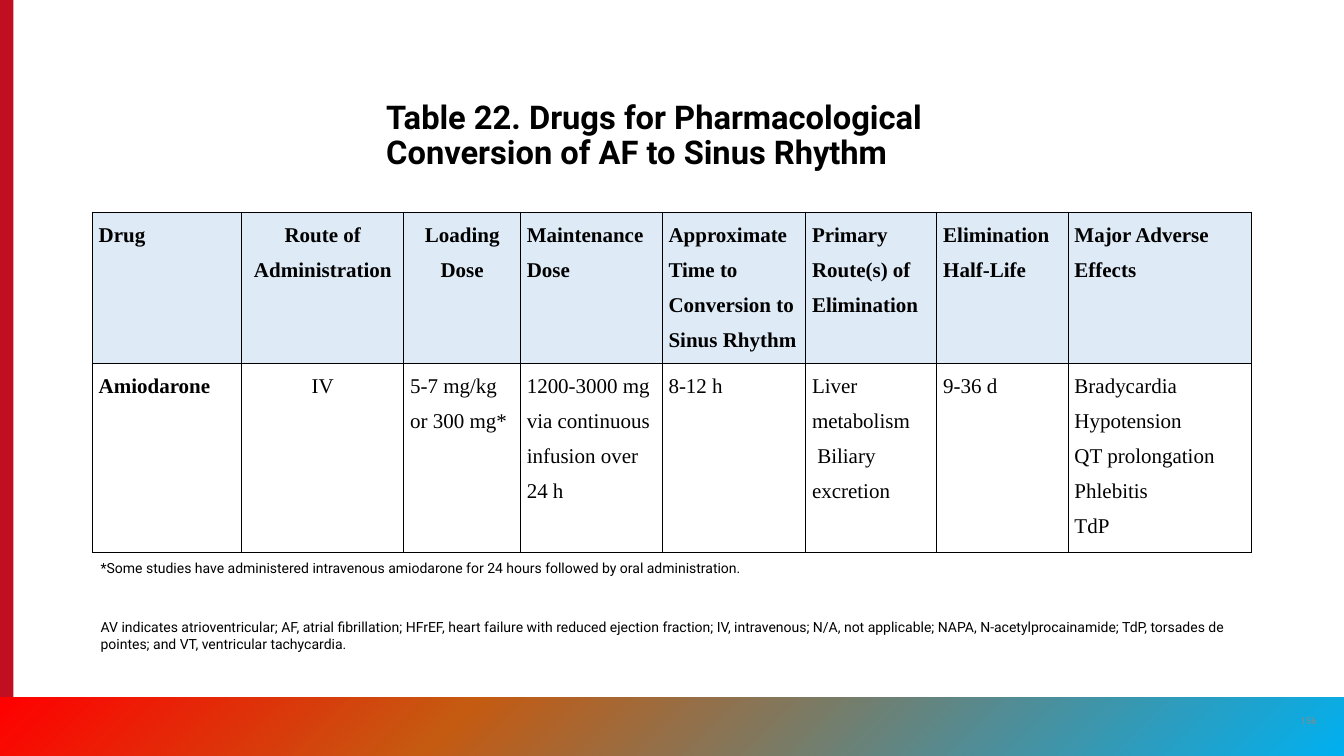
import dataclasses

import lxml.etree
import pptx
import pptx.dml.color
import pptx.enum.shapes
import pptx.enum.text
import pptx.oxml.ns
import pptx.util

Pt = pptx.util.Pt
RGB = pptx.dml.color.RGBColor.from_string
qn = pptx.oxml.ns.qn
ALIGN = pptx.enum.text.PP_ALIGN
ANCHOR = pptx.enum.text.MSO_ANCHOR


@dataclasses.dataclass(frozen=True)
class Theme:
    sans: str = "Roboto"
    serif: str = "Times New Roman"
    ink: str = "000000"
    paper: str = "FFFFFF"
    muted: str = "8A8B8A"
    accent: str = "C10E21"
    header: str = "DEEAF6"
    band: tuple = ((0, "FF0000"), (34, "C55A11"), (100, "00B0F0"))
    title_size: float = 28
    table_size: float = 18
    note_size: float = 12
    number_size: float = 8


def apply(target, formats):
    for name, value in formats.items():
        setattr(target, name, value)


class SlideBuilder:
    def __init__(self, page, theme):
        self.page = page
        self.theme = theme

    def add_span(self, para, text, size, font, color=None, bold=False, **formats):
        apply(para, formats)
        span = para.add_run()
        span.text = text
        apply(span.font, {"size": Pt(size), "name": font, "bold": bold})
        span.font.color.rgb = RGB(color or self.theme.ink)

    def add_text(self, frame, words, size, anchor=ANCHOR.TOP, **formats):
        box = self.page.shapes.add_textbox(*map(Pt, frame))
        apply(box.text_frame, {"word_wrap": True, "vertical_anchor": anchor})
        self.add_span(box.text_frame.paragraphs[0], words, size, self.theme.sans, **formats)

    def add_bar(self, frame, color=None, stops=()):
        kind = pptx.enum.shapes.MSO_SHAPE.RECTANGLE
        bar = self.page.shapes.add_shape(kind, *map(Pt, frame))
        bar.shadow.inherit = False
        bar.line.fill.background()
        if color:
            bar.fill.solid()
            bar.fill.fore_color.rgb = RGB(color)
            return
        bar.fill.gradient()
        bar.fill.gradient_angle = 315
        stop_list = bar._element.spPr.find(".//" + qn("a:gsLst"))
        for stop in list(stop_list):
            stop_list.remove(stop)
        for position, shade in stops:
            stop = lxml.etree.SubElement(stop_list, qn("a:gs"), pos=str(position * 1000))
            lxml.etree.SubElement(stop, qn("a:srgbClr"), val=shade)

    def add_border(self, cell):
        properties = cell._tc.get_or_add_tcPr()
        for index, side in enumerate(("a:lnL", "a:lnR", "a:lnT", "a:lnB")):
            line = lxml.etree.Element(qn(side), w=str(Pt(1)))
            fill = lxml.etree.SubElement(line, qn("a:solidFill"))
            lxml.etree.SubElement(fill, qn("a:srgbClr"), val=self.theme.ink)
            properties.insert(index, line)

    def fill_cell(self, cell, lines, fill, bold, align, indented):
        apply(cell, {"margin_left": Pt(5.4), "margin_right": Pt(5.4),
                     "margin_top": 0, "margin_bottom": 0})
        cell.fill.solid()
        cell.fill.fore_color.rgb = RGB(fill)
        self.add_border(cell)
        for index, line in enumerate(lines):
            para = cell.text_frame.paragraphs[0] if index == 0 else cell.text_frame.add_paragraph()
            self.add_span(para, line, self.theme.table_size, self.theme.serif,
                          bold=bold, alignment=align, line_spacing=1.5)
            if line in indented:
                para._p.get_or_add_pPr().set("indent", str(Pt(4.5)))

    def add_table(self, left, top, widths, heights, rows, centred, indented):
        holder = self.page.shapes.add_table(
            len(rows), len(widths), Pt(left), Pt(top), Pt(sum(widths)), Pt(sum(heights)))
        table = holder.table
        table.horz_banding = False
        for column, width in zip(table.columns, widths):
            column.width = Pt(width)
        for row, height in zip(table.rows, heights):
            row.height = Pt(height)
        for r, row in enumerate(rows):
            for c, lines in enumerate(row):
                fill = self.theme.paper if r else self.theme.header
                align = ALIGN.CENTER if (r, c) in centred else ALIGN.LEFT
                self.fill_cell(table.cell(r, c), lines, fill, r == 0 or c == 0, align, indented)


DRUG_ROWS = [
    [["Drug"], ["Route of Administration"], ["Loading Dose"], ["Maintenance Dose"],
     ["Approximate Time to Conversion to Sinus Rhythm"],
     ["Primary Route(s) of Elimination"], ["Elimination Half-Life"],
     ["Major Adverse Effects"]],
    [["Amiodarone"], ["IV"], ["5-7 mg/kg or 300 mg*"],
     ["1200-3000 mg via continuous infusion over 24 h"], ["8-12 h"],
     ["Liver metabolism", "Biliary excretion"], ["9-36 d"],
     ["Bradycardia", "Hypotension", "QT prolongation", "Phlebitis", "TdP"]],
]
ABBREVIATIONS = (
    "AV indicates atrioventricular; AF, atrial fibrillation; HFrEF, heart failure with "
    "reduced ejection fraction; IV, intravenous; N/A, not applicable; NAPA, "
    "N-acetylprocainamide; TdP, torsades de pointes; and VT, ventricular tachycardia.")
FOOTNOTE = ("*Some studies have administered intravenous amiodarone for 24 hours "
            "followed by oral administration.")


def main():
    deck = pptx.Presentation()
    apply(deck, {"slide_width": Pt(1152), "slide_height": Pt(648)})
    theme = Theme()
    builder = SlideBuilder(deck.slides.add_slide(deck.slide_layouts[6]), theme)
    builder.add_bar((0, 0, 11.5, 648), color=theme.accent)
    builder.add_bar((0, 597.6, 1152, 50.4), stops=theme.band)
    builder.add_text((1104.5, 600.5, 34.5, 34.5), "156", theme.number_size, ANCHOR.MIDDLE,
                     color=theme.muted, alignment=ALIGN.CENTER)
    builder.add_text((324, 84.2, 504, 66.3),
                     "Table 22. Drugs for Pharmacological Conversion of AF to Sinus Rhythm",
                     theme.title_size, ANCHOR.BOTTOM, bold=True, line_spacing=0.9)
    builder.add_table(79.2, 182, [128, 139, 100, 121.5, 123, 112.5, 112.5, 157.5],
                      [119, 149], DRUG_ROWS, {(0, 1), (0, 2), (1, 1)}, {"Biliary excretion"})
    builder.add_text((79.2, 527, 1000.8, 36), ABBREVIATIONS, theme.note_size)
    builder.add_text((79.2, 476, 624, 21.6), FOOTNOTE, theme.note_size)
    deck.save("out.pptx")


if __name__ == "__main__":
    main()
